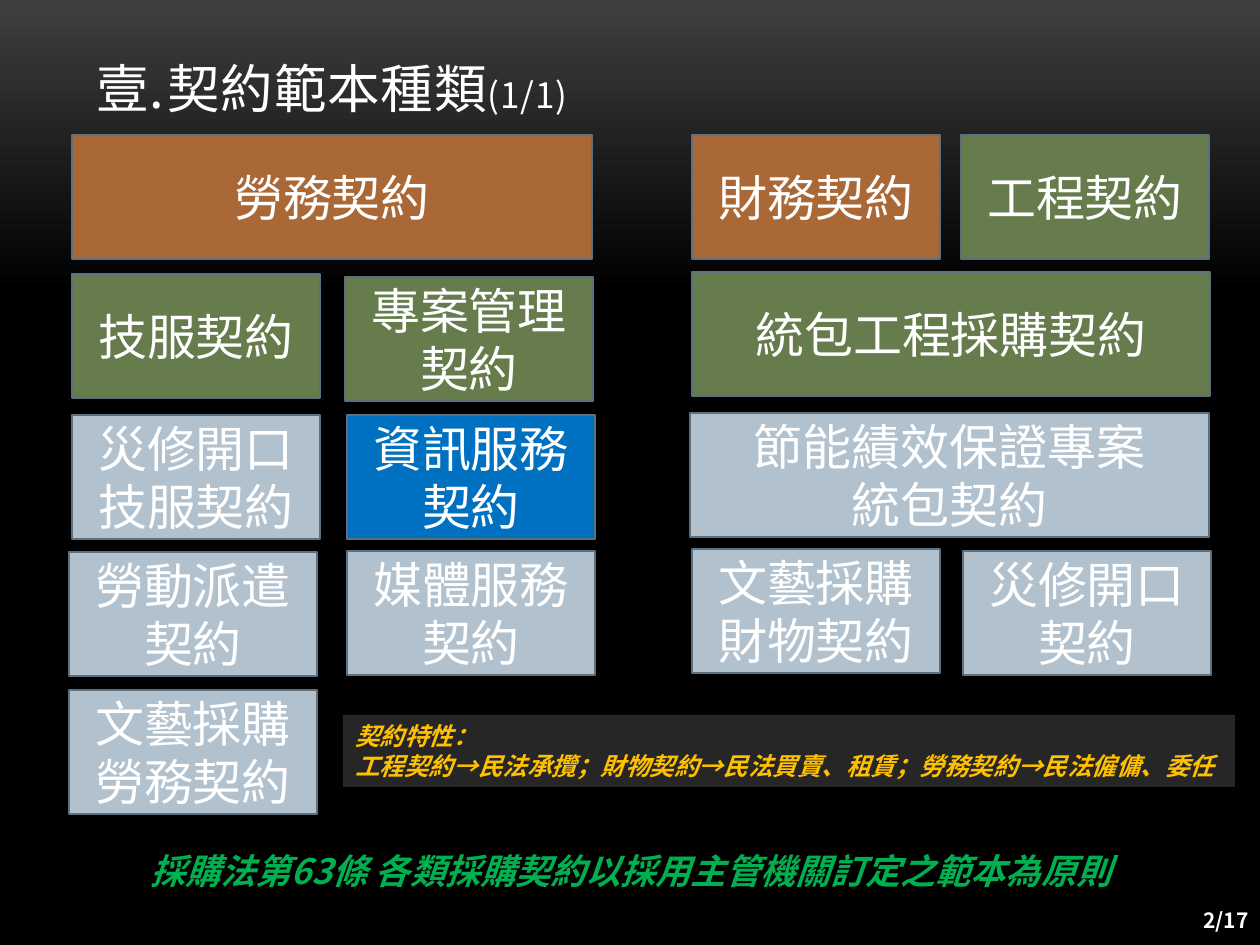
from lxml import etree
from pptx import Presentation
from pptx.dml.color import RGBColor
from pptx.enum.shapes import MSO_SHAPE
from pptx.enum.text import MSO_ANCHOR, MSO_AUTO_SIZE, PP_ALIGN
from pptx.oxml.ns import qn
from pptx.util import Emu, Pt

RECT = MSO_SHAPE.RECTANGLE
LEFT, MID, RIGHT = PP_ALIGN.LEFT, PP_ALIGN.CENTER, PP_ALIGN.RIGHT
TOP, CENTER, BOTTOM = MSO_ANCHOR.TOP, MSO_ANCHOR.MIDDLE, MSO_ANCHOR.BOTTOM
FIXED = MSO_AUTO_SIZE.NONE
FACE = "Noto Sans CJK SC"
HUES = {
    "brown": "AA6837", "olive": "667C4C", "pale": "B2C1CE", "blue": "0070C0",
    "edge": "5D7080", "dark": "262626", "gold": "FFC000", "green": "00B050",
    "white": "FFFFFF", "gray": "3F3F3F", "black": "000000",
}
HUES = {name: RGBColor.from_string(code) for name, code in HUES.items()}


def px(n):
    return Emu(round(n * 914400 / 126))


def style(font, node, size, hue, strong=None, slant=None):
    """Format a font and name its East Asian face too; node holds the font."""
    font.size, font.bold, font.italic = Pt(size), strong, slant
    font.color.rgb = HUES[hue]
    font.name = FACE
    etree.SubElement(node, qn("a:ea")).set("typeface", FACE)


prs = Presentation()
prs.slide_width, prs.slide_height = px(1260), px(945)
slide = prs.slides.add_slide(prs.slide_layouts[5])
shapes = slide.shapes

back = slide.background.fill
back.gradient()
back.gradient_angle = 270
for stop, hue, pos in zip(back.gradient_stops, ("gray", "black"), (0, 0.31)):
    stop.color.rgb = HUES[hue]
    stop.position = pos

# Title
title = shapes.title
title.left, title.top, title.width, title.height = px(84), px(38), px(1092), px(87)
frame = title.text_frame
frame.auto_size, frame.vertical_anchor = FIXED, BOTTOM
para = frame.paragraphs[0]
para.alignment = LEFT
props = para._p.get_or_add_pPr()
props.set("marL", str(px(71)))
props.set("indent", str(-px(71)))
etree.SubElement(props, qn("a:buFont")).set("typeface", "+mj-lt")
etree.SubElement(props, qn("a:buAutoNum")).set("type", "ea1ChtPeriod")
for text, size in (("契約範本種類", 30), ("(1/1)", 20)):
    run = para.add_run()
    run.text = text
    node = run._r.get_or_add_rPr()
    node.set("spc", "50")
    style(run.font, node, size, "white")

# Contract boxes: left, top, width, fill, text
ONE, TALL = 248, 124
boxes = [
    (72, 135, 520, "brown", "勞務契約"),
    (72, 274, ONE, "olive", "技服契約"),
    (72, 415, ONE, "pale", "災修開口技服契約"),
    (345, 277, ONE, "olive", "專案管理契約"),
    (347, 415, ONE, "blue", "資訊服務契約"),
    (69, 552, ONE, "pale", "勞動派遣契約"),
    (347, 551, ONE, "pale", "媒體服務契約"),
    (69, 690, ONE, "pale", "文藝採購勞務契約"),
    (961, 135, ONE, "olive", "工程契約"),
    (692, 135, ONE, "brown", "財務契約"),
    (692, 272, 518, "olive", "統包工程採購契約"),
    (963, 551, ONE, "pale", "災修開口契約"),
    (692, 549, ONE, "pale", "文藝採購財物契約"),
    (690, 413, 519, "pale", "節能績效保證專案\v統包契約"),
]
for x, y, w, hue, text in boxes:
    box = shapes.add_shape(RECT, px(x), px(y), px(w), px(TALL))
    box.shadow.inherit = False
    box.fill.solid()
    box.fill.fore_color.rgb = HUES[hue]
    box.line.color.rgb = HUES["edge"]
    box.line.width = Pt(0.85)
    frame = box.text_frame
    frame.text, frame.word_wrap, frame.vertical_anchor = text, True, CENTER
    para = frame.paragraphs[0]
    para.alignment = MID
    font = para.font
    style(font, para._p.pPr.find(qn("a:defRPr")), 28, "white")

# Texts: place, align, anchor, size, colour, slant, fill, text
notes = [
    ((1, 843, 1260, 55), MID, TOP, 20, "green", True, None,
     "採購法第63條 各類採購契約以採用主管機關訂定之範本為原則"),
    ((1125, 895, 136, 50), RIGHT, CENTER, 12, "white", None, None, "2/17"),
    ((343, 715, 892, 72), LEFT, TOP, 14, "gold", True, "dark",
     "契約特性：\n工程契約→民法承攬；財物契約→民法買賣、租賃；勞務契約→民法僱傭、委任"),
]
for place, align, anchor, size, hue, slant, fill, text in notes:
    note = shapes.add_textbox(*map(px, place))
    if fill:
        note.fill.solid()
        note.fill.fore_color.rgb = HUES[fill]
    frame = note.text_frame
    frame.text, frame.word_wrap, frame.vertical_anchor = text, True, anchor
    for para in frame.paragraphs:
        para.alignment = align
        font = para.font
        style(font, para._p.pPr.find(qn("a:defRPr")), size, hue, True, slant)

prs.save("out.pptx")
